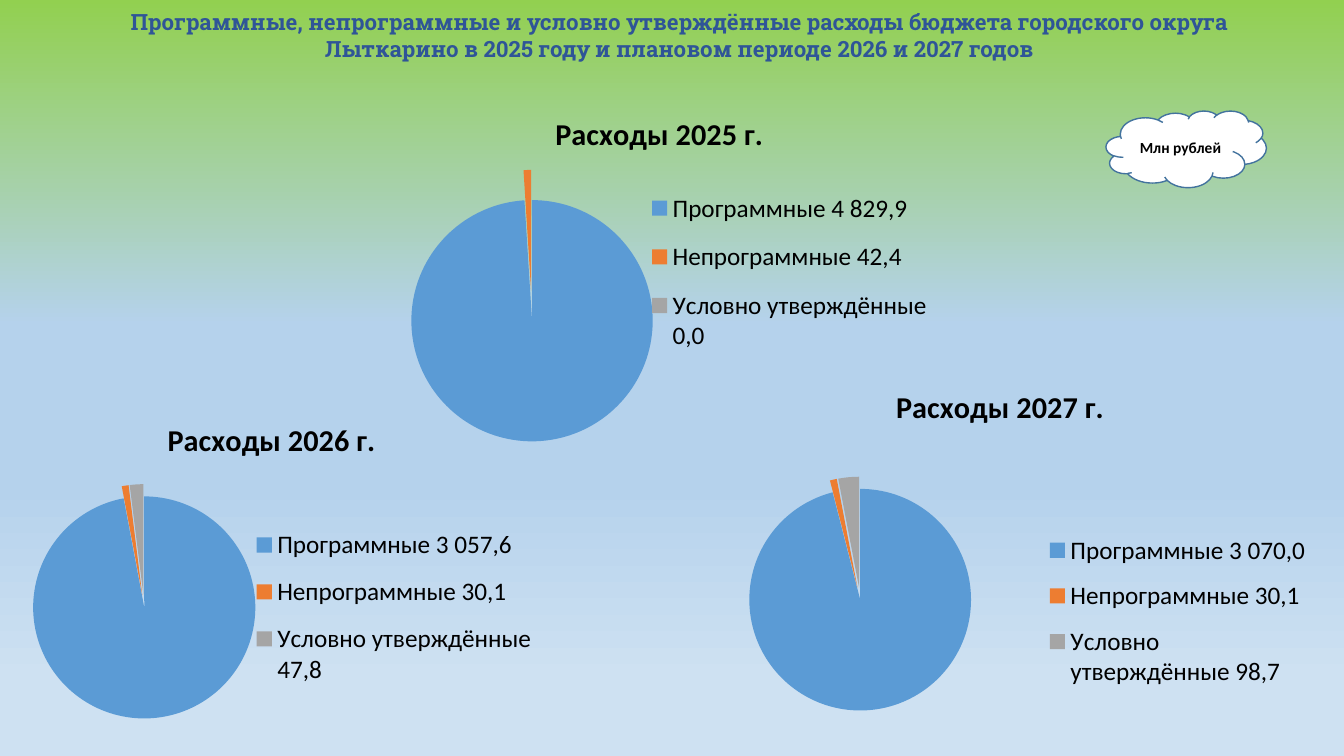
from lxml import etree
from pptx import Presentation
from pptx.chart.data import CategoryChartData
from pptx.dml.color import RGBColor
from pptx.enum.chart import XL_CHART_TYPE, XL_LEGEND_POSITION
from pptx.enum.shapes import MSO_SHAPE
from pptx.enum.text import MSO_ANCHOR, PP_ALIGN
from pptx.oxml import parse_xml
from pptx.oxml.ns import nsdecls, qn
from pptx.util import Inches, Pt

PIE = XL_CHART_TYPE.PIE
RIGHT = XL_LEGEND_POSITION.RIGHT
CLOUD = MSO_SHAPE.CLOUD
CENTER = PP_ALIGN.CENTER
MIDDLE = MSO_ANCHOR.MIDDLE

COLORS = {
    "heading": "2F5597", "text": "000000", "cloud": "FFFFFF", "outline": "43739E",
    "program": "5B9BD5", "other": "ED7D31", "conditional": "A5A5A5",
}
SLICE_COLORS = ["program", "other", "conditional"]
BACKGROUND_STOPS = [(0, "92D050"), (43, "B5D2EC"), (64, "B5D2EC"), (90, "CEE1F2")]

# year, frame, amounts, shares, series explosion, slice explosions, plot, legend
PIES = [
    (2025, (3.61, 0.94, 5.86, 3.45), ("4 829,9", "42,4", "0,0"), (99, 1, 0),
     0, (0, 25, 0), (0.053, 0.303, 0.463, 0.694), (0.48, 0.23, 0.48, 0.56)),
    (2026, (0, 3.98, 5.39, 3.27), ("3 057,6", "30,1", "47,8"), (98, 1, 2),
     11, (0, 11, 11), (0, 0.252, 0.531, 0.748), (0.46, 0.34, 0.53, 0.57)),
    (2027, (6.75, 3.64, 6.34, 3.7), ("3 070,0", "30,1", "98,7"), (96, 1, 3),
     25, (0, 11, 11), (0.064, 0.253, 0.434, 0.743), (0.577, 0.41, 0.41, 0.49)),
]


def style(font, size, color, bold=False, name="Calibri"):
    font.name, font.size, font.bold = name, Pt(size), bold
    font.color.rgb = RGBColor.from_string(COLORS[color])


def make_layout(bounds, inner=False):
    """Build a manual chart layout from left, top, width and height fractions."""
    target = '<c:layoutTarget val="inner"/>' if inner else ""
    modes = '<c:xMode val="edge"/><c:yMode val="edge"/>'
    sizes = "".join(f'<c:{tag} val="{value}"/>' for tag, value in zip("xywh", bounds))
    return parse_xml(f'<c:layout {nsdecls("c")}><c:manualLayout>{target}{modes}{sizes}'
                     "</c:manualLayout></c:layout>")


deck = Presentation()
deck.slide_width, deck.slide_height = Inches(13.33), Inches(7.5)
page = deck.slides.add_slide(deck.slide_layouts[6])

background = page.background.fill
background.gradient()
background.gradient_angle = 270
stop_list = page.background._cSld.find(".//" + qn("a:gsLst"))
for stop in list(stop_list):
    stop_list.remove(stop)
for percent, color in BACKGROUND_STOPS:
    stop = etree.SubElement(stop_list, qn("a:gs"), pos=str(percent * 1000))
    etree.SubElement(stop, qn("a:srgbClr"), val=color)

heading = page.shapes.add_textbox(Inches(0.83), Inches(0.08), Inches(11.82), Inches(0.67))
frame = heading.text_frame
frame.word_wrap = True
frame.margin_left = frame.margin_right = frame.margin_top = frame.margin_bottom = 0
para = frame.paragraphs[0]
para.text = ("Программные, непрограммные и условно утверждённые расходы бюджета городского "
             "округа Лыткарино в 2025 году и плановом периоде 2026 и 2027 годов")
para.alignment = CENTER
para.line_spacing = Pt(19.2)
style(para.font, 16, "heading", True, "Roboto Slab")

for year, bounds, amounts, shares, explosion, slice_explosions, plot_area, legend_area in PIES:
    title = f"Расходы {year} г."
    data = CategoryChartData()
    data.categories = [f"{label} {amount}" for label, amount in zip(
        ("Программные", "Непрограммные", "Условно утверждённые"), amounts)]
    data.add_series(title, shares)
    chart = page.shapes.add_chart(PIE, *map(Inches, bounds), data).chart
    style(chart.font, 18, "text")

    chart.has_title = True
    title_para = chart.chart_title.text_frame.paragraphs[0]
    title_para.text = title
    style(title_para.font, 21.6, "text", True)

    chart.has_legend = True
    legend = chart.legend
    legend.position = RIGHT
    legend.include_in_layout = False
    style(legend.font, 18, "text")
    for old in legend._element.findall(qn("c:layout")):
        legend._element.remove(old)
    legend._element.find(qn("c:legendPos")).addnext(make_layout(legend_area))

    plot = chart.plots[0]
    plot.vary_by_categories = True
    plot_element = plot._element.getparent()
    for old in plot_element.findall(qn("c:layout")):
        plot_element.remove(old)
    plot_element.insert(0, make_layout(plot_area, inner=True))

    series = plot.series[0]
    for index, (color, offset) in enumerate(zip(SLICE_COLORS, slice_explosions)):
        fill = series.points[index].format.fill
        fill.solid()
        fill.fore_color.rgb = RGBColor.from_string(COLORS[color])
        properties = series._element.findall(qn("c:dPt"))[index].find(qn("c:spPr"))
        properties.addprevious(parse_xml(f'<c:explosion {nsdecls("c")} val="{offset}"/>'))
    if explosion:
        series._element.find(qn("c:dPt")).addprevious(
            parse_xml(f'<c:explosion {nsdecls("c")} val="{explosion}"/>'))

cloud = page.shapes.add_shape(CLOUD, Inches(10.97), Inches(1.1), Inches(1.59), Inches(0.76))
cloud.shadow.inherit = False
cloud.fill.solid()
cloud.fill.fore_color.rgb = RGBColor.from_string(COLORS["cloud"])
cloud.line.color.rgb = RGBColor.from_string(COLORS["outline"])
cloud.line.width = Pt(1)
cloud.text_frame.word_wrap = True
cloud.text_frame.vertical_anchor = MIDDLE
para = cloud.text_frame.paragraphs[0]
para.text = "Млн рублей"
para.alignment = CENTER
style(para.font, 11, "text", True)

deck.save("out.pptx")
